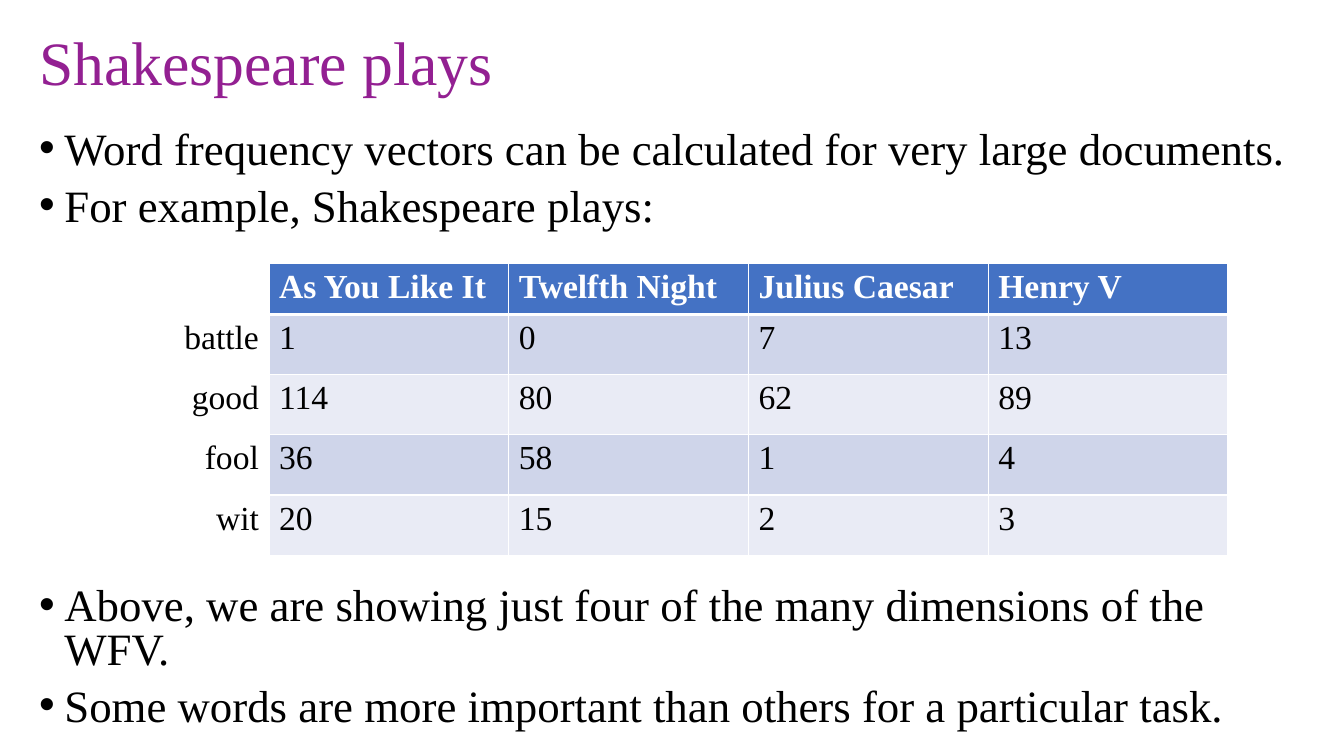
from dataclasses import dataclass

import pptx
import pptx.dml.color
import pptx.enum.text
import pptx.oxml.ns
import pptx.util
from lxml import etree

Inches = pptx.util.Inches
Pt = pptx.util.Pt


@dataclass(frozen=True)
class Theme:
    font: str = "Times New Roman"
    title_size: int = 44
    body_size: int = 32
    table_size: int = 24
    title: str = "932092"
    text: str = "000000"
    white: str = "FFFFFF"
    header: str = "4472C4"
    bands: tuple = ("CFD5EA", "E9EBF5")


THEME = Theme()

PLAYS = ["As You Like It", "Twelfth Night", "Julius Caesar", "Henry V"]
COUNTS = {
    "battle": [1, 0, 7, 13],
    "good": [114, 80, 62, 89],
    "fool": [36, 58, 1, 4],
    "wit": [20, 15, 2, 3],
}


def add_run(p, text, size, color, bold=False):
    r = p.add_run()
    r.text = text
    r.font.name = THEME.font
    r.font.size = Pt(size)
    r.font.bold = bold
    r.font.color.rgb = pptx.dml.color.RGBColor.from_string(color)


def add_text_frame(s, box):
    tf = s.shapes.add_textbox(*map(Inches, box)).text_frame
    tf.word_wrap = True
    return tf


def add_title(s, box, text):
    tf = add_text_frame(s, box)
    tf.vertical_anchor = pptx.enum.text.MSO_ANCHOR.MIDDLE
    p = tf.paragraphs[0]
    p.line_spacing = 0.9
    add_run(p, text, THEME.title_size, THEME.title)


def add_bullets(s, box, lines):
    tf = add_text_frame(s, box)
    for i, line in enumerate(lines):
        p = tf.add_paragraph() if i else tf.paragraphs[0]
        p.line_spacing = 0.8
        p.space_before = Pt(10)
        pPr = p._p.get_or_add_pPr()
        pPr.set("marL", str(Inches(0.25)))
        pPr.set("indent", str(Inches(-0.25)))
        etree.SubElement(pPr, pptx.oxml.ns.qn("a:buFont"), typeface="Arial")
        etree.SubElement(pPr, pptx.oxml.ns.qn("a:buChar"), char="•")
        add_run(p, line, THEME.body_size, THEME.text)


def set_borders(cell, top, bottom):
    tcPr = cell._tc.get_or_add_tcPr()
    for side, width in (("L", 1), ("R", 1), ("T", top), ("B", bottom)):
        ln = etree.SubElement(tcPr, pptx.oxml.ns.qn(f"a:ln{side}"), w=str(Pt(width)))
        fill = etree.SubElement(ln, pptx.oxml.ns.qn("a:solidFill"))
        etree.SubElement(fill, pptx.oxml.ns.qn("a:srgbClr"), val=THEME.white)


def add_counts_table(s, box):
    rows = [["", *PLAYS]] + [[word, *counts] for word, counts in COUNTS.items()]
    header_height = 0.51
    row_height = (box[3] - header_height) / len(COUNTS)
    table = s.shapes.add_table(len(rows), len(rows[0]), *map(Inches, box)).table
    for column in table.columns:
        column.width = Inches(box[2] / len(rows[0]))
    for i, values in enumerate(rows):
        table.rows[i].height = Inches(row_height if i else header_height)
        for j, value in enumerate(values):
            cell = table.cell(i, j)
            set_borders(cell, top=3 if i == 1 else 1, bottom=1 if i else 3)
            if j == 0:
                color = THEME.white
            else:
                color = THEME.bands[(i - 1) % 2] if i else THEME.header
            cell.fill.solid()
            cell.fill.fore_color.rgb = pptx.dml.color.RGBColor.from_string(color)
            p = cell.text_frame.paragraphs[0]
            if value == "":
                continue
            if j == 0:
                p.alignment = pptx.enum.text.PP_ALIGN.RIGHT
            add_run(p, str(value), THEME.table_size,
                    THEME.text if i else THEME.white, bold=i == 0)


def add_plays_slide(prs, left, width):
    s = prs.slides.add_slide(prs.slide_layouts[6])
    add_title(s, (left, 0.17, width, 0.97), "Shakespeare plays")
    add_bullets(s, (left, 1.25, width, 1.2), [
        "Word frequency vectors can be calculated for very large documents.",
        "For example, Shakespeare plays:",
    ])
    add_counts_table(s, (left, 2.61, 11.89, 2.9))
    add_bullets(s, (left, 5.78, width, 1.38), [
        "Above, we are showing just four of the many dimensions of the WFV.",
        "Some words are more important than others for a particular task.",
    ])


def main():
    prs = pptx.Presentation()
    prs.slide_width = Inches(13.33)
    prs.slide_height = Inches(7.5)
    add_plays_slide(prs, 0.29, 12.73)
    prs.save("out.pptx")


if __name__ == "__main__":
    main()
